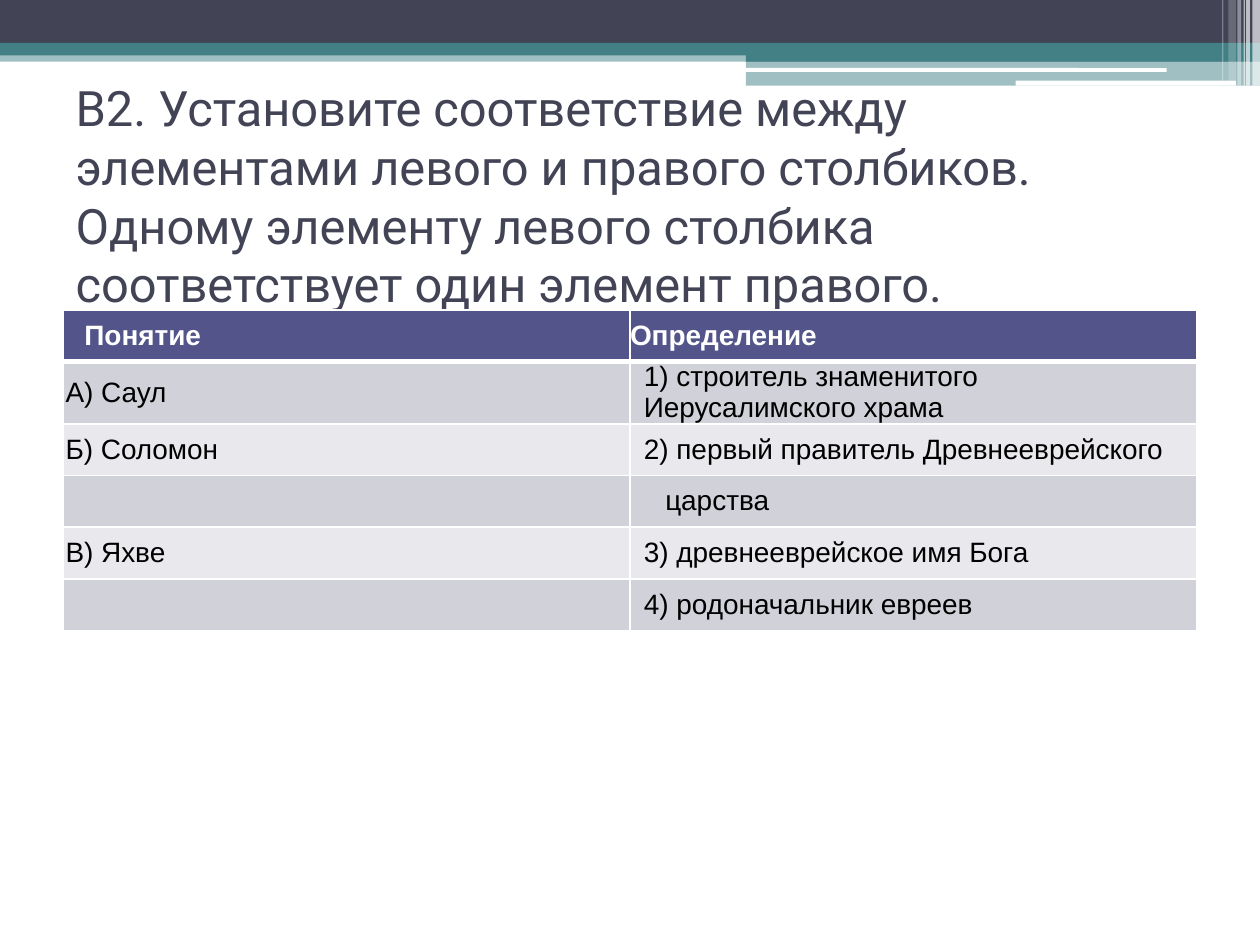
"""Build the matching-exercise slide with its banner, title and table."""
from dataclasses import dataclass

from lxml import etree
from pptx import Presentation
from pptx import util as u
from pptx.dml.color import RGBColor
from pptx.enum import shapes, text
from pptx.oxml.ns import qn


@dataclass(frozen=True)
class Theme:
    """Colours, fonts and type sizes of the slide."""
    navy: str = "424456"
    teal: str = "438086"
    white: str = "FFFFFF"
    black: str = "000000"
    header: str = "53548A"
    bands: tuple = ("D1D1DA", "E9E9ED")
    title_font: str = "Roboto"
    table_font: str = "Arial"
    title_size: float = 27.9
    table_size: float = 16


THEME = Theme()
RECT = shapes.MSO_SHAPE.RECTANGLE
ROUND = shapes.MSO_SHAPE.ROUNDED_RECTANGLE

BANNER = [
    (RECT, 0, 0.4, 10, 0.09, THEME.teal, 50),
    (RECT, 0, 0, 10, 0.34, THEME.navy, 100),
    (RECT, 0, 0.34, 10, 0.1, THEME.teal, 100),
    (RECT, 5.92, 0.39, 4.08, 0.1, THEME.teal, 100),
    (RECT, 5.92, 0.48, 4.08, 0.2, THEME.teal, 50),
    (ROUND, 5.91, 0.54, 3.35, 0.03, THEME.white, 100),
    (ROUND, 8.06, 0.64, 1.75, 0.04, THEME.white, 100),
]
STRIPES = [
    (9.94, 0.06, 0.68, 65), (9.89, 0.03, 0.68, 65), (9.87, 0.01, 0.68, 60),
    (9.82, 0.03, 0.68, 40), (9.75, 0.06, 0.64, 20), (9.7, 0.01, 0.64, 30),
]
TITLE = ("В2. Установите соответствие между элементами левого и правого "
         "столбиков. Одному элементу левого столбика соответствует один "
         "элемент правого.")
ROWS = [
    (("Понятие", 0.17), ("Определение", 0)),
    (("А) Саул", 0.02), ("1) строитель знаменитого Иерусалимского храма", 0.11)),
    (("Б) Соломон", 0.02), ("2) первый правитель Древнееврейского", 0.11)),
    (("", 0), ("царства", 0.28)),
    (("В) Яхве", 0.02), ("3) древнееврейское имя Бога", 0.11)),
    (("", 0), ("4) родоначальник евреев", 0.11)),
]


def add_bar(slide, kind, left, top, width, height, colour, opacity):
    """Add one borderless bar of the banner."""
    bar = slide.shapes.add_shape(kind, *map(u.Inches, (left, top, width, height)))
    bar.shadow.inherit = False
    bar.line.fill.background()
    bar.fill.solid()
    bar.fill.fore_color.rgb = RGBColor.from_string(colour)
    if opacity < 100:
        tint = bar.fill._xPr.find(qn("a:solidFill"))[0]
        etree.SubElement(tint, qn("a:alpha"), val=str(opacity * 1000))


def add_run(paragraph, words, font, size, colour, bold=False):
    """Append a formatted run to a paragraph."""
    run = paragraph.add_run()
    run.text = words
    run.font.name = font
    run.font.size = u.Pt(size)
    run.font.bold = bold
    run.font.color.rgb = RGBColor.from_string(colour)


def fill_title(slide):
    """Place and write the title, raised clear of the table."""
    title = slide.shapes.title
    title.left, title.top, title.width, title.height = map(
        u.Inches, (0.5, 1.25, 9, 1.17))
    frame = title.text_frame
    frame.word_wrap = True
    frame.auto_size = text.MSO_AUTO_SIZE.NONE
    frame.vertical_anchor = text.MSO_ANCHOR.MIDDLE
    frame.margin_bottom = u.Inches(0.62)
    paragraph = frame.paragraphs[0]
    paragraph.alignment = text.PP_ALIGN.LEFT
    add_run(paragraph, TITLE, THEME.title_font, THEME.title_size, THEME.navy)


def add_borders(cell, top, bottom):
    """Draw white borders of the given point widths around a cell."""
    properties = cell._tc.get_or_add_tcPr()
    for side, width in (("L", 1), ("R", 1), ("T", top), ("B", bottom)):
        line = etree.SubElement(properties, qn(f"a:ln{side}"), w=str(u.Pt(width)))
        fill = etree.SubElement(line, qn("a:solidFill"))
        etree.SubElement(fill, qn("a:srgbClr"), val=THEME.white)


def fill_cell(cell, words, indent, row):
    """Write and format one table cell."""
    is_header = row == 0
    add_borders(cell, 3 if row == 1 else 1, 3 if is_header else 1)
    cell.fill.solid()
    cell.fill.fore_color.rgb = RGBColor.from_string(
        THEME.header if is_header else THEME.bands[(row - 1) % 2])
    if not words:
        return
    cell.vertical_anchor = text.MSO_ANCHOR.MIDDLE
    cell.margin_left = cell.margin_right = cell.margin_top = cell.margin_bottom = 0
    paragraph = cell.text_frame.paragraphs[0]
    paragraph._p.get_or_add_pPr().set("marL", str(u.Inches(indent)))
    add_run(paragraph, words, THEME.table_font, THEME.table_size,
            THEME.white if is_header else THEME.black, is_header)


def add_matching_table(slide):
    """Add the table of concepts and definitions."""
    table = slide.shapes.add_table(
        len(ROWS), 2, u.Inches(0.5), u.Inches(2.46),
        u.Inches(9), u.Inches(0.41 * len(ROWS))).table
    for row, entries in enumerate(ROWS):
        for column, (words, indent) in enumerate(entries):
            fill_cell(table.cell(row, column), words, indent, row)


def main():
    """Build and save the presentation."""
    deck = Presentation()
    deck.slide_width, deck.slide_height = u.Inches(10), u.Inches(7.5)
    slide = deck.slides.add_slide(deck.slide_layouts.get_by_name("Title Only"))
    for bar in BANNER:
        add_bar(slide, *bar)
    for left, width, height, opacity in STRIPES:
        add_bar(slide, RECT, left, 0, width, height, THEME.white, opacity)
    fill_title(slide)
    add_matching_table(slide)
    deck.save("out.pptx")


if __name__ == "__main__":
    main()
